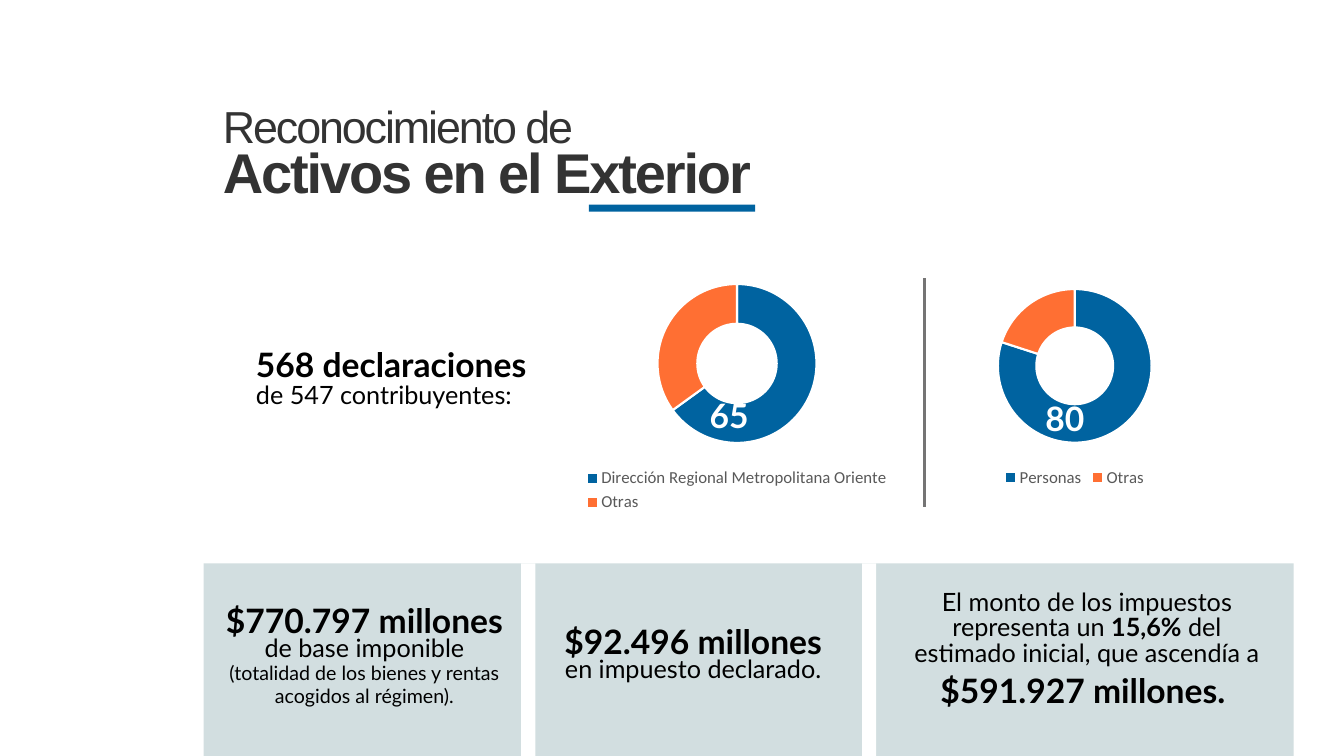
from pptx import Presentation
from pptx.chart.data import CategoryChartData
from pptx.dml.color import RGBColor
from pptx.enum.chart import XL_CHART_TYPE as ChartType, XL_LEGEND_POSITION as LegendPosition
from pptx.enum.shapes import MSO_CONNECTOR as Connector, MSO_SHAPE as Shape
from pptx.enum.text import MSO_ANCHOR as Anchor, MSO_AUTO_SIZE as AutoSize, PP_ALIGN as Align
from pptx.oxml.ns import qn
from pptx.util import Pt
from lxml import etree

EMU_PER_PX = 9144  # 100 px to the inch
BLUE = RGBColor(0x00, 0x63, 0xA0)
ORANGE = RGBColor(0xFF, 0x6F, 0x33)
PALE = RGBColor(0xD2, 0xDE, 0xE0)
WHITE = RGBColor(0xFF, 0xFF, 0xFF)
BLACK = RGBColor(0, 0, 0)
TITLE_GRAY = RGBColor(0x33, 0x33, 0x33)
LEGEND_GRAY = RGBColor(0x59, 0x59, 0x59)
LINE_GRAY = RGBColor(0x75, 0x74, 0x74)


def px(*lengths):
    return [length * EMU_PER_PX for length in lengths]


def set_font(font, name, size, color, bold=False):
    font.name, font.size, font.bold = name, Pt(size), bold
    font.color.rgb = color


def add_block(slide, box, color):
    block = slide.shapes.add_shape(Shape.RECTANGLE, *px(*box))
    block.shadow.inherit = False
    block.fill.solid()
    block.fill.fore_color.rgb = color
    block.line.fill.background()


def add_text(slide, box, lines, align=Align.CENTER, color=BLACK, wrap=True):
    """Each line is (text or list of (text, bold) runs, size, bold, line spacing)."""
    frame = slide.shapes.add_textbox(*px(*box)).text_frame
    frame.word_wrap = wrap
    frame.auto_size = AutoSize.SHAPE_TO_FIT_TEXT
    for index, (content, size, bold, spacing) in enumerate(lines):
        paragraph = frame.add_paragraph() if index else frame.paragraphs[0]
        paragraph.alignment = align
        paragraph.line_spacing = spacing
        set_font(paragraph.font, "Lato", size, color, bold)
        if isinstance(content, str):
            content = [(content, None)]
        for text, run_bold in content:
            run = paragraph.add_run()
            run.text = text
            run.font.bold = run_bold


def fill_title(slide, box):
    left, top, width, height = box
    title = slide.shapes.title
    title.left, title.top, title.width, title.height = px(*box)
    frame = title.text_frame
    frame.auto_size = AutoSize.NONE
    frame.vertical_anchor = Anchor.TOP
    frame.text = "Reconocimiento de\nActivos en el Exterior"
    for paragraph, size, bold in zip(frame.paragraphs, (32, 40), (False, True)):
        paragraph.alignment = Align.LEFT
        paragraph.line_spacing = Pt(37)
        set_font(paragraph.font, "Arial", size, TITLE_GRAY, bold)
        paragraph.runs[0]._r.get_or_add_rPr().set("spc", "-150")
    add_block(slide, (left + 373, top + 108, 165, 7), BLUE)


def add_doughnut(slide, box, categories, values, label_offset):
    left, top, width, height = box
    data = CategoryChartData()
    data.categories = categories
    data.add_series("Series 1", values)
    chart = slide.shapes.add_chart(ChartType.DOUGHNUT, *px(*box), data).chart
    set_font(chart.font, "Calibri", 10, BLACK)
    chart.has_title = False
    chart.has_legend = True
    chart.legend.position = LegendPosition.BOTTOM
    chart.legend.include_in_layout = False
    set_font(chart.legend.font, "Calibri", 12, LEGEND_GRAY)
    plot = chart.plots[0]
    plot.vary_by_categories = True
    plot.has_data_labels = False
    for index, color in enumerate((BLUE, ORANGE)):
        point_format = plot.series[0].points[index].format
        point_format.fill.solid()
        point_format.fill.fore_color.rgb = color
        point_format.line.color.rgb = WHITE
        point_format.line.width = Pt(1.5)
    label_left, label_top = label_offset
    add_text(slide, (left + label_left, top + label_top, 85, 50),
             [(f"{values[0]}%", 24, True, 1.0)], Align.LEFT, WHITE, wrap=False)


def add_declarations(slide, box):
    left, top, width, height = box
    add_text(slide, (left, top + 83, 305, 61),
             [("568 declaraciones", 24, True, Pt(18)),
              ("de 547 contribuyentes:", 18, False, Pt(18))], Align.JUSTIFY)
    add_doughnut(slide, (left + 304, top, 366, 244),
                 ("Dirección Regional Metropolitana Oriente", "Otras"), (65, 35), (146, 119))
    add_doughnut(slide, (left + 722, top + 5, 200, 215),
                 ("Personas", "Otras"), (80, 20), (61, 117))
    x = left + 673
    divider = slide.shapes.add_connector(Connector.STRAIGHT, *px(x, top + 8, x, top + 235))
    divider.line.color.rgb = LINE_GRAY
    divider.line.width = Pt(1.5)
    etree.SubElement(divider._element.spPr, qn("a:effectLst"))


def add_amounts(slide, box):
    left, top, width, height = box
    add_block(slide, box, PALE)
    for offset in (315, 653):
        add_block(slide, (left + offset, top, 14, height), WHITE)
    add_text(slide, (left - 1, top + 49, 321, 100),
             [("$770.797 millones", 24, True, Pt(16)),
              ("de base imponible", 18, False, Pt(16)),
              ("(totalidad de los bienes y rentas acogidos al régimen).", 14, False, Pt(16))])
    add_text(slide, (left + 346, top + 49, 279, 77),
             [("$92.496 millones", 24, True, 1.07),
              ("en impuesto declarado.", 18, False, Pt(16))], wrap=False)
    add_text(slide, (left + 685, top + 23, 382, 128),
             [([("El monto de los impuestos representa un ", None), ("15,6%", True),
                (" del estimado inicial, que ascendía a", None)], 18, False, Pt(18)),
              ("$591.927 millones. ", 24, True, 1.07)])


def main():
    presentation = Presentation()
    presentation.slide_width, presentation.slide_height = px(1333, 750)
    slide = presentation.slides.add_slide(presentation.slide_layouts[5])
    fill_title(slide, (211, 95, 563, 111))
    add_declarations(slide, (244, 268, 922, 244))
    add_amounts(slide, (202, 559, 1081, 191))
    presentation.save("out.pptx")


if __name__ == "__main__":
    main()
